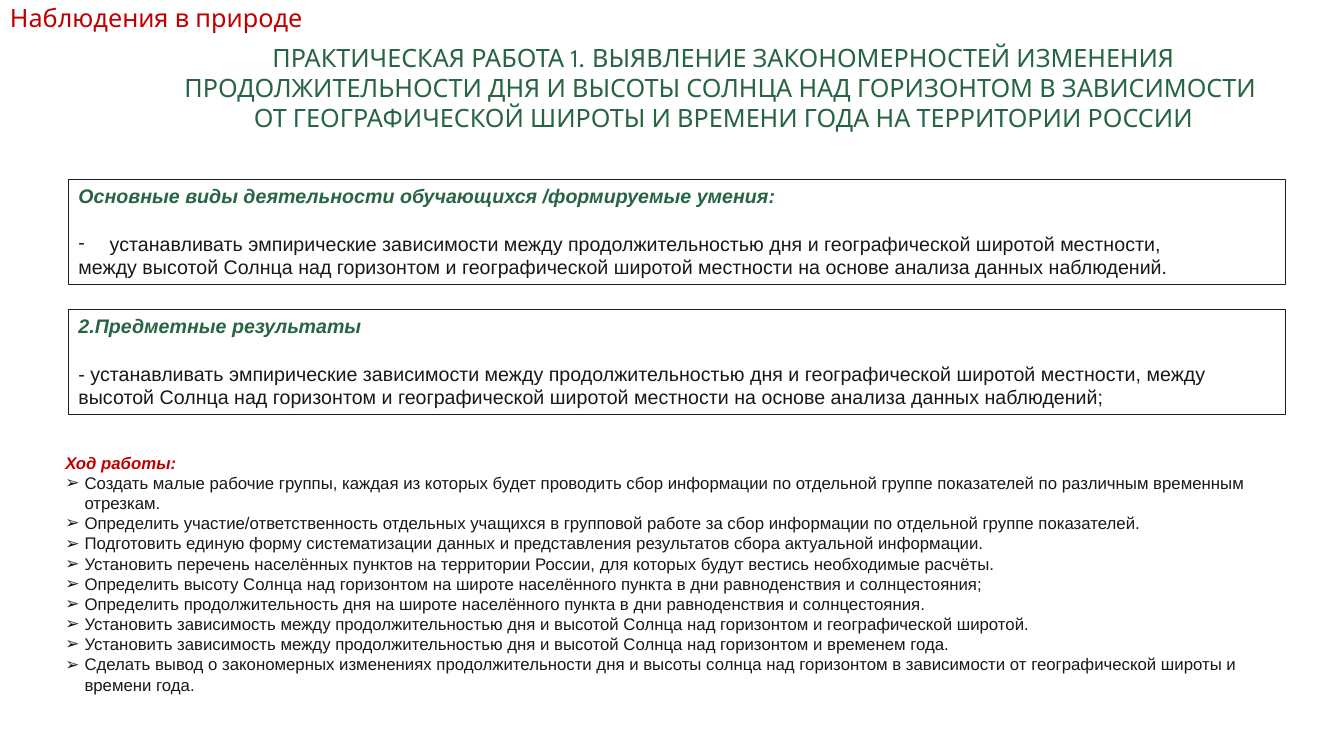
from lxml.etree import SubElement
from pptx import Presentation
from pptx.dml.color import RGBColor
from pptx.enum.shapes import MSO_SHAPE
from pptx.enum.text import MSO_ANCHOR, PP_ALIGN
from pptx.oxml.ns import qn
from pptx.util import Inches, Pt

GREEN, RED, INK, BORDER = "266442", "C00000", "181818", "191F27"
LEFT, WIDTH = 0.68, 12.07
HEADING = {"bold": True, "italic": True}

TITLE = [
    "ПРАКТИЧЕСКАЯ РАБОТА 1. ВЫЯВЛЕНИЕ ЗАКОНОМЕРНОСТЕЙ ИЗМЕНЕНИЯ ПРОДОЛЖИТЕЛЬНОСТИ "
    "ДНЯ И ВЫСОТЫ СОЛНЦА НАД ГОРИЗОНТОМ В ЗАВИСИМОСТИ ",
    "ОТ ГЕОГРАФИЧЕСКОЙ ШИРОТЫ И ВРЕМЕНИ ГОДА НА ТЕРРИТОРИИ РОССИИ",
]
STEPS = [
    "Создать малые рабочие группы, каждая из которых будет проводить сбор информации "
    "по отдельной группе показателей по различным временным отрезкам.",
    "Определить участие/ответственность отдельных учащихся в групповой работе за сбор "
    "информации по отдельной группе показателей.",
    "Подготовить единую форму систематизации данных и представления результатов сбора "
    "актуальной информации.",
    "Установить перечень населённых пунктов на территории России, для которых будут "
    "вестись необходимые расчёты.",
    "Определить высоту Солнца над горизонтом на широте населённого пункта в дни "
    "равноденствия и солнцестояния;",
    "Определить продолжительность дня на широте населённого пункта в дни "
    "равноденствия и солнцестояния.",
    "Установить зависимость между продолжительностью дня и высотой Солнца над "
    "горизонтом и географической широтой.",
    "Установить зависимость между продолжительностью дня и высотой Солнца над "
    "горизонтом и временем года.",
    "Сделать вывод о закономерных изменениях продолжительности дня и высоты солнца над "
    "горизонтом в зависимости от географической широты и времени года.",
]
SKILLS = [
    ("устанавливать эмпирические зависимости между продолжительностью дня и "
     "географической широтой местности,", {"bullet": ("-", 0.31)}),
    ("между высотой Солнца над горизонтом и географической широтой местности на основе "
     "анализа данных наблюдений.", {"alignment": PP_ALIGN.JUSTIFY}),
]
RESULTS = [
    ("- устанавливать эмпирические зависимости между продолжительностью дня и "
     "географической широтой местности, между высотой Солнца над горизонтом и "
     "географической широтой местности на основе анализа данных наблюдений;", {}),
]


def color(value):
    """Turn a hex string into a colour."""
    return RGBColor.from_string(value)


def set_all(target, values):
    """Set attributes from a dict of format values."""
    for name, value in values.items():
        setattr(target, name, value)


def set_bullet(para, mark, indent):
    """Give a paragraph a hanging bullet."""
    properties = para._p.get_or_add_pPr()
    properties.set("marL", str(Inches(indent)))
    properties.set("indent", str(-Inches(indent)))
    SubElement(properties, qn("a:buFont"), typeface="Arial")
    SubElement(properties, qn("a:buChar"), char=mark)


def write(box, lines, font, size):
    """Fill a box with (text, colour, font values, paragraph values) lines."""
    frame = box.text_frame
    set_all(frame, {"word_wrap": True, "vertical_anchor": MSO_ANCHOR.TOP})
    for index, (text, shade, style, layout) in enumerate(lines):
        para = frame.add_paragraph() if index else frame.paragraphs[0]
        layout = {"alignment": PP_ALIGN.LEFT, **layout}
        bullet = layout.pop("bullet", None)
        set_all(para, layout)
        if bullet:
            set_bullet(para, *bullet)
        span = para.add_run()
        span.text = text
        set_all(span.font, {"name": font, "size": Pt(size), **style})
        span.font.color.rgb = color(shade)


def add_text(page, area, lines, font, size):
    """Place a plain text region."""
    box = page.shapes.add_textbox(*map(Inches, area))
    write(box, lines, font, size)


def add_panel(page, area, heading, body):
    """Place an outlined panel with a heading and body text."""
    box = page.shapes.add_shape(MSO_SHAPE.RECTANGLE, *map(Inches, area))
    box.shadow.inherit = False
    box.fill.background()
    box.line.color.rgb = color(BORDER)
    box.line.width = Pt(0.75)
    lines = [(heading, GREEN, HEADING, {"space_after": Pt(16.8)})]
    lines += [(text, INK, {}, layout) for text, layout in body]
    write(box, lines, "Arial", 14)


def add_steps(page, area):
    """Place the bulleted course of work."""
    lines = [("Ход работы:", RED, HEADING, {})]
    lines += [(step, INK, {}, {"bullet": ("➢", 0.19)}) for step in STEPS]
    add_text(page, area, lines, "Arial", 12)


def main():
    """Build the slide and save the deck."""
    deck = Presentation()
    set_all(deck, {"slide_width": Inches(13.33), "slide_height": Inches(7.5)})
    page = deck.slides.add_slide(deck.slide_layouts[6])
    title = [(text, GREEN, {}, {"alignment": PP_ALIGN.CENTER}) for text in TITLE]
    add_text(page, (1.6, 0.37, 11.15, 1.01), title, "League Spartan", 18)
    panels = [
        ("Основные виды деятельности обучающихся /формируемые умения:", SKILLS),
        ("2.Предметные результаты", RESULTS),
    ]
    for row, (heading, body) in enumerate(panels):
        add_panel(page, (LEFT, 1.78 + 1.29 * row, WIDTH, 1.04), heading, body)
    add_steps(page, (0.55, 4.44, 12.2, 2.52))
    topic = [("Наблюдения в природе", RED, {}, {})]
    add_text(page, (0, -0.03, 3.62, 0.4), topic, "League Spartan", 18)
    deck.save("out.pptx")


if __name__ == "__main__":
    main()
